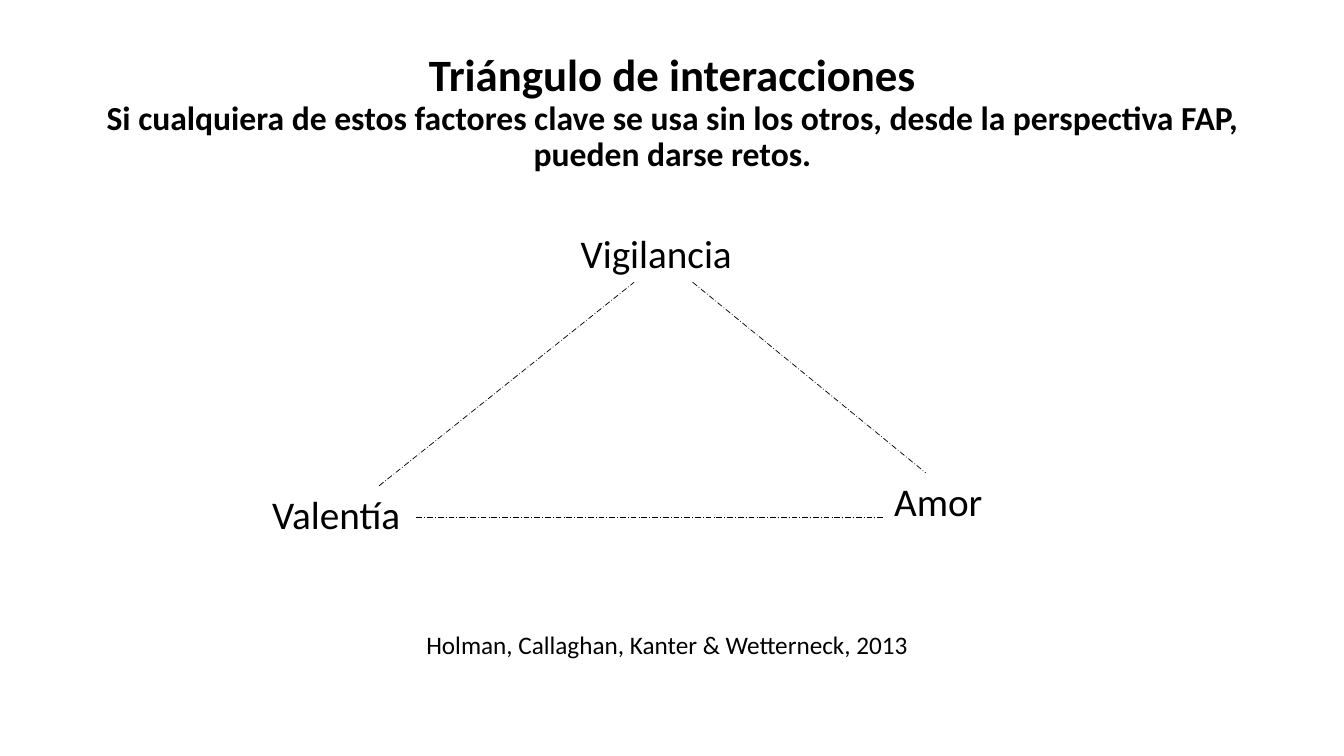
from pptx import Presentation
from pptx.dml.color import RGBColor
from pptx.enum.dml import MSO_LINE
from pptx.enum.shapes import MSO_CONNECTOR
from pptx.enum.text import MSO_ANCHOR, PP_ALIGN
from pptx.oxml.ns import qn
from pptx.util import Inches, Pt
from lxml import etree

BLANK_LAYOUT = 6
STRAIGHT = MSO_CONNECTOR.STRAIGHT
LONG_DASH_DOT = MSO_LINE.LONG_DASH_DOT
MIDDLE = MSO_ANCHOR.MIDDLE
CENTER = PP_ALIGN.CENTER
BLACK = "000000"
FONT = "Calibri"

FACTORS = [
    ("Vigilancia", 5.66, 2.23, 1.92),
    ("Valentía", 2.6, 4.82, 1.71),
    ("Amor", 8.77, 4.69, 1.26),
]
SIDES = [
    ((3.76, 4.82), (6.29, 2.8)),
    ((6.87, 2.8), (9.18, 4.69)),
    ((4.13, 5.13), (8.77, 5.13)),
]


def color(hex_value):
    return RGBColor.from_string(hex_value)


def add_text(slide, text, left, top, width, height, size):
    """Add a one-paragraph text box and return its text frame."""
    box = slide.shapes.add_textbox(
        Inches(left), Inches(top), Inches(width), Inches(height))
    frame = box.text_frame
    frame.word_wrap = True
    paragraph = frame.paragraphs[0]
    paragraph.add_run().text = text
    paragraph.font.name = FONT
    paragraph.font.size = Pt(size)
    paragraph.font.color.rgb = color(BLACK)
    return frame


def add_title(slide, heading, subheading):
    frame = add_text(slide, heading, 0.92, 0.4, 11.5, 1.45, 32)
    frame.vertical_anchor = MIDDLE
    paragraph = frame.paragraphs[0]
    paragraph.alignment = CENTER
    paragraph.line_spacing = 0.9
    paragraph.font.bold = True
    paragraph.add_line_break()
    run = paragraph.add_run()
    run.text = subheading
    run.font.size = Pt(24)


def add_side(slide, start, end):
    """Add one dashed side of the triangle."""
    points = [Inches(value) for value in (*start, *end)]
    connector = slide.shapes.add_connector(STRAIGHT, *points)
    connector.line.color.rgb = color(BLACK)
    connector.line.width = Pt(0.5)
    connector.line.dash_style = LONG_DASH_DOT
    properties = connector.element.find(qn("p:spPr"))
    etree.SubElement(properties, qn("a:effectLst"))


def main():
    presentation = Presentation()
    presentation.slide_width = Inches(13.33)
    presentation.slide_height = Inches(7.5)
    slide = presentation.slides.add_slide(
        presentation.slide_layouts[BLANK_LAYOUT])

    add_title(
        slide,
        "Triángulo de interacciones",
        "Si cualquiera de estos factores clave se usa sin los otros, "
        "desde la perspectiva FAP, pueden darse retos.")
    for name, left, top, width in FACTORS:
        add_text(slide, name, left, top, width, 0.57, 28)
    for start, end in SIDES:
        add_side(slide, start, end)
    add_text(slide, "Holman, Callaghan, Kanter & Wetterneck, 2013",
             4.13, 6.19, 5.06, 0.4, 18)

    presentation.save("out.pptx")


if __name__ == "__main__":
    main()
